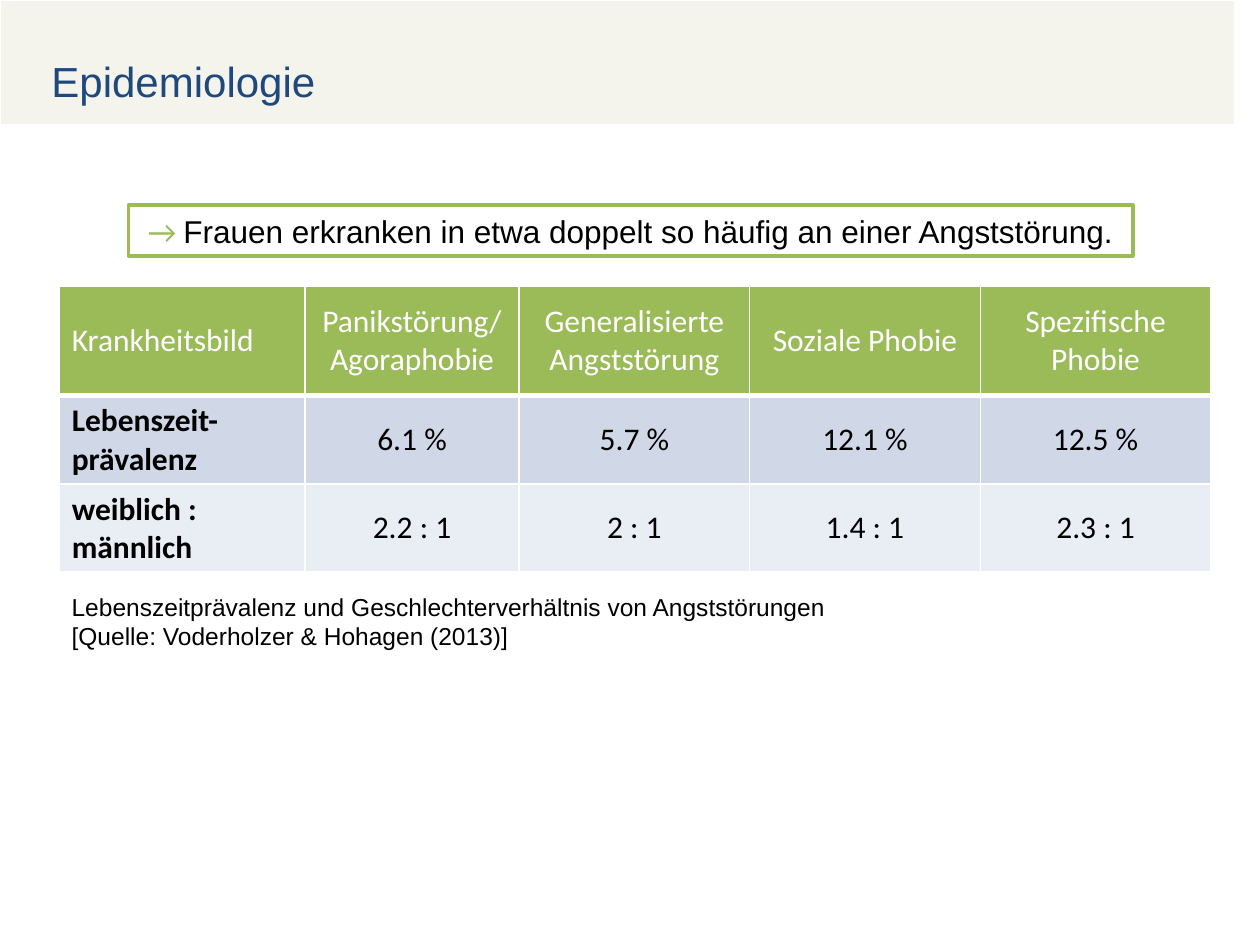
from dataclasses import dataclass

from lxml.etree import SubElement
from pptx import Presentation
from pptx.dml.color import RGBColor
from pptx.enum.shapes import MSO_SHAPE
from pptx.enum.text import MSO_ANCHOR, PP_ALIGN
from pptx.oxml.ns import qn
from pptx.util import Inches, Pt

WHITE = RGBColor(0xFF, 0xFF, 0xFF)
BLACK = RGBColor(0x00, 0x00, 0x00)
NAVY = RGBColor(0x1F, 0x49, 0x7D)
GREEN = RGBColor(0x9B, 0xBB, 0x59)
BANNER = RGBColor(0xF4, 0xF3, 0xEC)
BLUE = RGBColor(0xD0, 0xD8, 0xE8)
PALE_BLUE = RGBColor(0xE9, 0xED, 0xF4)


@dataclass
class TableRow:
    label: str
    values: list[str]
    height: float
    fill: RGBColor
    color: RGBColor = BLACK
    bold_label: bool = True
    bottom_border: float = 1
    top_border: float = 1


COLUMN_WIDTHS = [1.95, 1.7, 1.83, 1.83, 1.83]
ROWS = [
    TableRow(
        "Krankheitsbild",
        ["Panikstörung/\nAgoraphobie", "Generalisierte\nAngststörung",
         "Soziale Phobie", "Spezifische Phobie"],
        0.87, GREEN, WHITE, bold_label=False, bottom_border=3,
    ),
    TableRow("Lebenszeit-prävalenz", ["6.1 %", "5.7 %", "12.1 %", "12.5 %"],
             0.7, BLUE, top_border=3),
    TableRow("weiblich : männlich", ["2.2 : 1", "2 : 1", "1.4 : 1", "2.3 : 1"],
             0.7, PALE_BLUE),
]


def add_text(para, text: str, *, size: float = 18, font: str = "Arial",
             color: RGBColor = BLACK, bold: bool = False, align=PP_ALIGN.LEFT) -> None:
    para.alignment = align
    for index, line in enumerate(text.split("\n")):
        if index:
            para.add_line_break()
        span = para.add_run()
        span.text = line
        span.font.size = Pt(size)
        span.font.name = font
        span.font.bold = bold
        span.font.color.rgb = color


def add_box(page, left: float, top: float, width: float, height: float,
            lines: list[str], **text_format) -> None:
    box = page.shapes.add_textbox(Inches(left), Inches(top), Inches(width), Inches(height))
    frame = box.text_frame
    frame.word_wrap = True
    for index, line in enumerate(lines):
        para = frame.add_paragraph() if index else frame.paragraphs[0]
        add_text(para, line, **text_format)


def add_rectangle(page, left: float, top: float, width: float, height: float, *,
                  fill: RGBColor | None, line: RGBColor, line_width: float):
    shape = page.shapes.add_shape(
        MSO_SHAPE.RECTANGLE, Inches(left), Inches(top), Inches(width), Inches(height))
    shape.shadow.inherit = False
    if fill is None:
        shape.fill.background()
    else:
        shape.fill.solid()
        shape.fill.fore_color.rgb = fill
    shape.line.color.rgb = line
    shape.line.width = Pt(line_width)
    return shape


def set_borders(cell, top: float, bottom: float) -> None:
    properties = cell._tc.get_or_add_tcPr()
    for tag, width in (("a:lnL", 1), ("a:lnR", 1), ("a:lnT", top), ("a:lnB", bottom)):
        border = SubElement(properties, qn(tag), w=str(Pt(width)))
        fill = SubElement(border, qn("a:solidFill"))
        SubElement(fill, qn("a:srgbClr"), val=str(WHITE))


def add_prevalence_table(page, left: float, top: float, rows: list[TableRow]) -> None:
    table = page.shapes.add_table(
        len(rows), len(COLUMN_WIDTHS), Inches(left), Inches(top),
        Inches(sum(COLUMN_WIDTHS)), Inches(sum(row.height for row in rows))).table
    table.first_row = False
    table.horz_banding = False
    for column, width in zip(table.columns, COLUMN_WIDTHS):
        column.width = Inches(width)
    for row_index, row in enumerate(rows):
        table.rows[row_index].height = Inches(row.height)
        for column_index, text in enumerate([row.label, *row.values]):
            cell = table.cell(row_index, column_index)
            is_label = column_index == 0
            set_borders(cell, row.top_border, row.bottom_border)
            cell.fill.solid()
            cell.fill.fore_color.rgb = row.fill
            cell.vertical_anchor = MSO_ANCHOR.MIDDLE
            add_text(cell.text_frame.paragraphs[0], text, font="Calibri",
                     color=row.color, bold=is_label and row.bold_label,
                     align=PP_ALIGN.LEFT if is_label else PP_ALIGN.CENTER)


def main() -> None:
    deck = Presentation()
    deck.slide_width = Inches(10)
    deck.slide_height = Inches(7.5)
    page = deck.slides.add_slide(deck.slide_layouts[6])

    add_rectangle(page, 0, 0, 9.8, 0.99, fill=BANNER, line=WHITE, line_width=0.75)
    add_box(page, 0.31, 0.39, 7.58, 0.5, ["Epidemiologie"], size=24, color=NAVY)
    add_prevalence_table(page, 0.47, 2.27, ROWS)
    add_box(page, 0.47, 4.65, 9.14, 0.57,
            ["Lebenszeitprävalenz und Geschlechterverhältnis von Angststörungen",
             "[Quelle: Voderholzer & Hohagen (2013)]"], size=14)

    callout = add_rectangle(page, 1.02, 1.63, 7.97, 0.4,
                            fill=None, line=GREEN, line_width=2.25)
    callout.text_frame.word_wrap = True
    para = callout.text_frame.paragraphs[0]
    add_text(para, "→ ", font="Calibri", color=GREEN, align=PP_ALIGN.CENTER)
    add_text(para, "Frauen erkranken in etwa doppelt so häufig an einer Angststörung.",
             align=PP_ALIGN.CENTER)

    deck.save("out.pptx")


if __name__ == "__main__":
    main()
